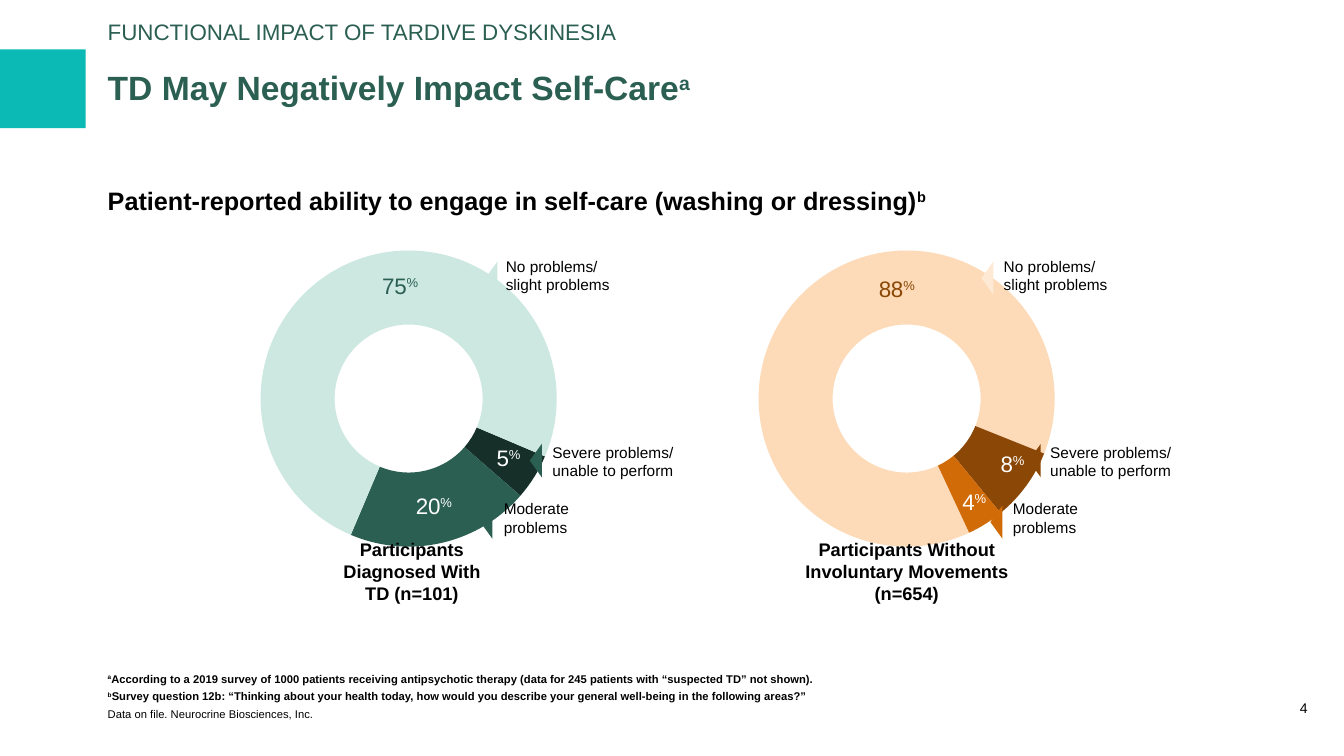
"""Builds a slide with two doughnut charts on self-care ability."""
from dataclasses import dataclass
from typing import NamedTuple

from lxml import etree
from pptx import Presentation
from pptx.chart.data import CategoryChartData as Data
from pptx.dml.color import RGBColor
from pptx.enum.chart import XL_CHART_TYPE as Kind
from pptx.enum.shapes import MSO_SHAPE as Form
from pptx.enum.text import MSO_ANCHOR as Anchor, PP_ALIGN as Align
from pptx.oxml.ns import qn
from pptx.util import Pt

TEAL = RGBColor(0x0B, 0xBA, 0xB4)
GREEN = RGBColor(0x2B, 0x5F, 0x51)
DARK = RGBColor(0x16, 0x30, 0x29)
MINT = RGBColor(0xCC, 0xE8, 0xE0)
PEACH = RGBColor(0xFD, 0xDB, 0xB9)
CREAM = RGBColor(0xFD, 0xE9, 0xD4)
BROWN = RGBColor(0x8A, 0x47, 0x05)
AMBER = RGBColor(0xD0, 0x6B, 0x08)
BLACK = RGBColor(0, 0, 0)
WHITE = RGBColor(0xFF, 0xFF, 0xFF)
FONT = "Arial"
WIDE, HIGH, RING = 346.3, 231.1, 211.6


class Box(NamedTuple):
    left: float
    top: float
    width: float
    height: float


class Run(NamedTuple):
    text: str
    bold: bool = False
    sup: bool = False


@dataclass
class Block:
    box: Box
    paras: list[list[Run]]
    size: float
    color: RGBColor = BLACK
    anchor: Anchor = Anchor.MIDDLE
    align: Align = Align.LEFT
    inset: tuple[float, float, float, float] = (0, 0, 0, 0)
    wrap: bool = True
    lead: float = 1.0
    after: float = 0


class Slice(NamedTuple):
    value: int
    fill: RGBColor
    ink: RGBColor
    dx: float
    dy: float


class Note(NamedTuple):
    text: str
    box: Box
    tip: tuple[float, float]
    color: RGBColor
    wrap: bool = True


@dataclass
class Ring:
    left: float
    start: int
    cuts: list[Slice]
    cap: list[str]
    cap_x: float
    notes: list[Note]


PAD = (7.2, 3.6, 7.2, 3.6)
NONE, HARD, MILD = ("No problems/ slight problems",
                    "Severe problems/\nunable to perform", "Moderate problems")

BLOCKS = [
    Block(Box(77, 28.1, 709.9, 71.3),
          [[Run("TD May Negatively Impact Self-Care", True), Run("a", True, True)]],
          24, GREEN, lead=0.95),
    Block(Box(77, 133.9, 832.3, 311.8),
          [[Run("Patient-reported ability to engage in self-care (washing or dressing)", True),
            Run("b", True, True)]], 18, anchor=Anchor.TOP, lead=0.95),
    Block(Box(919.4, 481, 23.8, 31), [[Run("4")]], 10,
          anchor=Anchor.BOTTOM, align=Align.CENTER, lead=0.95),
    Block(Box(77, 13, 709.9, 20.2),
          [[Run("FUNCTIONAL IMPACT OF TARDIVE DYSKINESIA")]], 16, GREEN, lead=0.95),
    Block(Box(77, 482.4, 832.3, 32.4),
          [[Run("a", True, True),
            Run("According to a 2019 survey of 1000 patients receiving antipsychotic therapy "
                "(data for 245 patients with “suspected TD” not shown).", True)],
           [Run("b", True, True),
            Run("Survey question 12b: “Thinking about your health today, how would you "
                "describe your general well-being in the following areas?”", True)],
           [Run("Data on file. Neurocrine Biosciences, Inc.")]],
          8, anchor=Anchor.BOTTOM, after=3),
]

RINGS = [
    Ring(118.8, 113,
         [Slice(5, DARK, WHITE, 4, 1), Slice(20, GREEN, WHITE, 0, 0),
          Slice(75, MINT, GREEN, 23.5, -6.5)],
         ["Participants\nDiagnosed With\nTD (n=101)"], 167.8,
         [Note(NONE, Box(354.2, 180.7, 101.5, 31.7), (339.1, 194.4), MINT),
          Note(HARD, Box(394.6, 310.3, 96.5, 38.2), (370.8, 324.7), GREEN, False),
          Note(MILD, Box(352.8, 354.2, 81.4, 31.7), (335.5, 368.6), GREEN)]),
    Ring(474.5, 155,
         [Slice(88, PEACH, BROWN, 50.5, -23.5), Slice(8, BROWN, WHITE, 11.5, 0),
          Slice(4, AMBER, WHITE, 6, 7)],
         ["Participants Without\nInvoluntary Movements", "(n=654)"], 521.3,
         [Note(NONE, Box(709.9, 180.7, 103, 31.7), (693.4, 194.4), CREAM),
          Note(HARD, Box(750.2, 310.3, 96.5, 38.2), (727.2, 324.7), BROWN, False),
          Note(MILD, Box(716.4, 354.2, 81.4, 31.7), (699.8, 368.6), AMBER)]),
]


def place(box: Box) -> list[Pt]:
    return [Pt(n) for n in box]


def write(para, runs: list[Run], size: float, color: RGBColor) -> None:
    for item in runs:
        for row, text in enumerate(item.text.split("\n")):
            if row:
                para.add_line_break()
            run = para.add_run()
            run.text = text
            font = run.font
            font.name, font.size, font.bold = FONT, Pt(size), item.bold
            font.color.rgb = color
            if item.sup:
                run._r.get_or_add_rPr().set("baseline", "30000")


def add_text(slide, block: Block) -> None:
    frame = slide.shapes.add_textbox(*place(block.box)).text_frame
    frame.word_wrap = block.wrap
    frame.vertical_anchor = block.anchor
    (frame.margin_left, frame.margin_top,
     frame.margin_right, frame.margin_bottom) = [Pt(n) for n in block.inset]
    for row, runs in enumerate(block.paras):
        para = frame.add_paragraph() if row else frame.paragraphs[0]
        para.alignment = block.align
        para.line_spacing = block.lead
        para.space_after = Pt(block.after)
        write(para, runs, block.size, block.color)


def add_form(slide, form: Form, box: Box, color: RGBColor, turn: float = 0) -> None:
    shape = slide.shapes.add_shape(form, *place(box))
    shape.shadow.inherit = False
    shape.fill.solid()
    shape.fill.fore_color.rgb = color
    shape.line.fill.background()
    shape.rotation = turn


def lay_out(**vals: str | float):
    layout = etree.Element(qn("c:layout"))
    manual = etree.SubElement(layout, qn("c:manualLayout"))
    for name, val in vals.items():
        etree.SubElement(manual, qn(f"c:{name}")).set("val", str(val))
    return layout


def add_ring(slide, ring: Ring) -> None:
    data = Data()
    data.categories = [str(n + 1) for n in range(len(ring.cuts))]
    data.add_series("Series 1", [cut.value for cut in ring.cuts])
    box = Box(ring.left, 169.2, WIDE, HIGH)
    chart = slide.shapes.add_chart(Kind.DOUGHNUT, *place(box), data).chart
    chart.has_legend = chart.has_title = False
    chart.font.name, chart.font.size = FONT, Pt(10)
    chart.font.color.rgb = BLACK
    root = chart._chartSpace
    root.xpath(".//c:firstSliceAng")[0].set("val", str(ring.start))
    root.xpath(".//c:holeSize")[0].set("val", "45")
    area = root.xpath(".//c:plotArea")[0]
    for old in area.findall(qn("c:layout")):
        area.remove(old)
    wide, high = RING / WIDE, RING / HIGH
    area.insert(0, lay_out(layoutTarget="inner", xMode="edge", yMode="edge",
                           x=(1 - wide) / 2, y=(1 - high) / 2, w=wide, h=high))
    points = chart.plots[0].series[0].points
    for row, cut in enumerate(ring.cuts):
        point = points[row]
        point.format.fill.solid()
        point.format.fill.fore_color.rgb = cut.fill
        point.format.line.fill.background()
        para = point.data_label.text_frame.paragraphs[0]
        write(para, [Run(str(cut.value)), Run("%", sup=True)], 16, cut.ink)
    for label, cut in zip(root.xpath(".//c:dLbl"), ring.cuts):
        label.insert(1, lay_out(x=cut.dx / WIDE, y=cut.dy / HIGH))


def main() -> None:
    deck = Presentation()
    deck.slide_width, deck.slide_height = Pt(960), Pt(540)
    slide = deck.slides.add_slide(deck.slide_layouts[6])
    add_form(slide, Form.RECTANGLE, Box(0, 35.3, 61.2, 56.2), TEAL)
    for ring in RINGS:
        add_ring(slide, ring)
        add_text(slide, Block(Box(ring.cap_x, 388.8, 252.7, 38.2),
                              [[Run(text, True)] for text in ring.cap], 13,
                              align=Align.CENTER, inset=PAD))
        for note in ring.notes:
            inset = PAD if note.wrap else (0, 0, 7.2, 0)
            add_text(slide, Block(note.box, [[Run(note.text)]], 11,
                                  inset=inset, wrap=note.wrap))
            add_form(slide, Form.ISOSCELES_TRIANGLE, Box(*note.tip, 23.8, 8.6),
                     note.color, 270)
    for block in BLOCKS:
        add_text(slide, block)
    deck.save("out.pptx")


if __name__ == "__main__":
    main()
